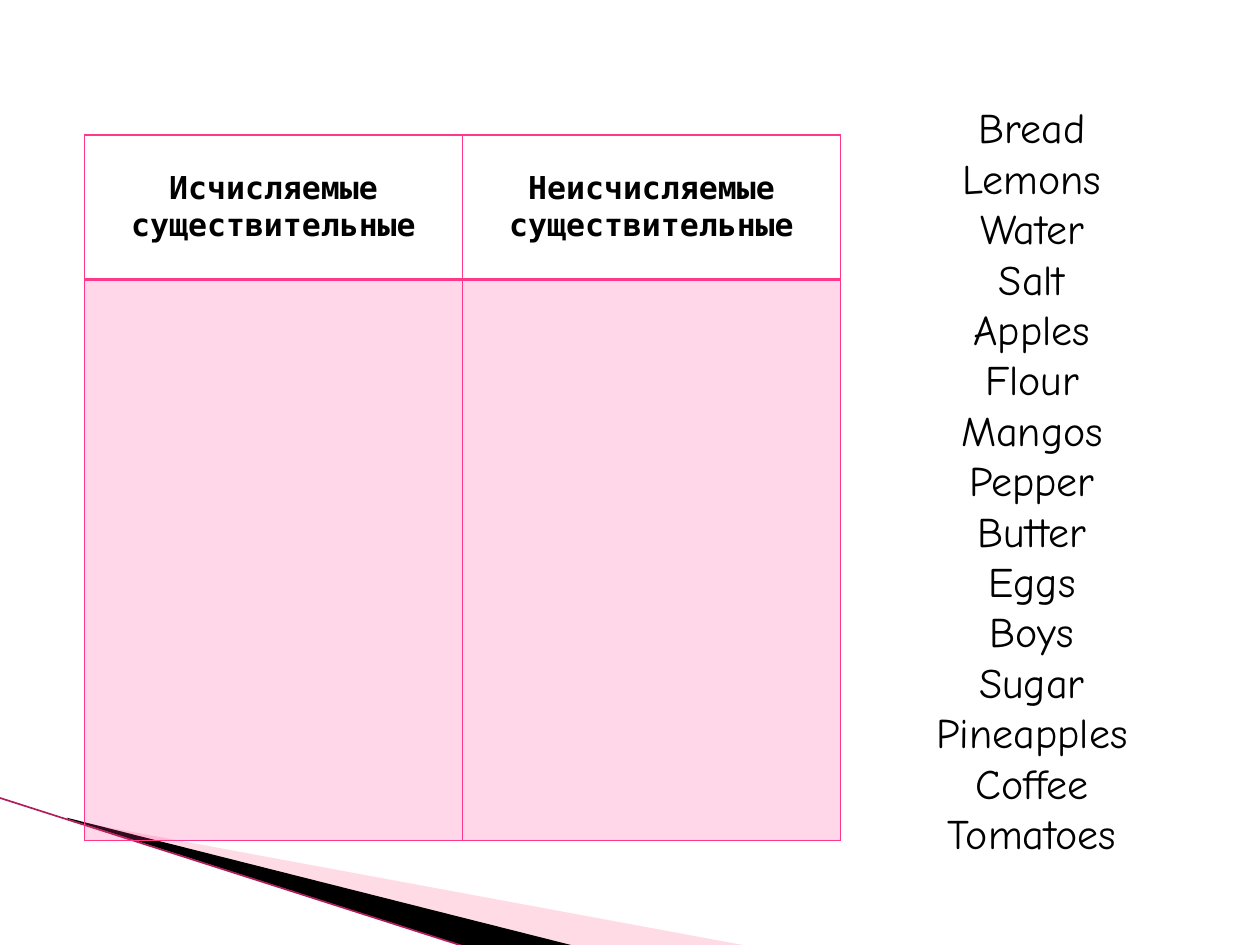
from lxml.etree import SubElement
from pptx import Presentation
from pptx.dml.color import RGBColor
from pptx.enum.shapes import MSO_CONNECTOR
from pptx.enum.text import MSO_ANCHOR, MSO_AUTO_SIZE, PP_ALIGN
from pptx.oxml.ns import qn
from pptx.util import Inches, Pt

BLACK = RGBColor(0x00, 0x00, 0x00)
PINK = RGBColor(0xFF, 0x38, 0x8C)
PALE_PINK = RGBColor(0xFF, 0xA5, 0xBF)
CRIMSON = RGBColor(0xB0, 0x1F, 0x5C)

HEADINGS = ["Исчисляемые существительные", "Неисчисляемые существительные"]
WORDS = ["Bread", "Lemons", "Water", "Salt", "Apples", "Flour", "Mangos", "Pepper",
         "Butter", "Eggs", "Boys", "Sugar", "Pineapples", "Coffee", "Tomatoes"]


def fill_with(owner, color, opacity=100):
    """Fill a shape or cell with a solid colour; opacity is in percent."""
    owner.fill.solid()
    owner.fill.fore_color.rgb = color
    if opacity < 100:
        element = owner._tc if hasattr(owner, "_tc") else owner._element
        color_element = next(element.iter(qn("a:srgbClr")))
        # Cell borders also hold colours, so take the one in the fill itself.
        if hasattr(owner, "_tc"):
            color_element = element.tcPr.find(qn("a:solidFill")).find(qn("a:srgbClr"))
        SubElement(color_element, qn("a:alpha"), val=str(opacity * 1000))


def add_text(para, text, font_name, size, bold=False):
    para.alignment = PP_ALIGN.CENTER
    span = para.add_run()
    span.text = text
    span.font.name = font_name
    span.font.size = Pt(size)
    span.font.bold = bold
    span.font.color.rgb = BLACK


deck = Presentation()
deck.slide_width, deck.slide_height = Inches(10), Inches(7.5)
page = deck.slides.add_slide(deck.slide_layouts[6])

# Wedges in the lower left corner
wedges = [
    ([(0.55, 6.51), (5.95, 7.51), (4.56, 7.51), (0.55, 6.5)], PALE_PINK, 40),
    ([(0.53, 6.49), (4.57, 7.51), (3.72, 7.52), (0.54, 6.5)], BLACK, 100),
]
for points, color, opacity in wedges:
    corners = [(Inches(x), Inches(y)) for x, y in points]
    builder = page.shapes.build_freeform(*corners[0])
    builder.add_line_segments(corners[1:], close=True)
    wedge = builder.convert_to_shape()
    wedge.shadow.inherit = False
    wedge.line.fill.background()
    fill_with(wedge, color, opacity)

edge = page.shapes.add_connector(
    MSO_CONNECTOR.STRAIGHT, Inches(-0.01), Inches(6.33), Inches(3.71), Inches(7.52))
edge.line.color.rgb = CRIMSON
edge.line.width = Pt(0.95)
SubElement(edge._element.spPr, qn("a:effectLst"))

# Table for sorting the nouns
table = page.shapes.add_table(
    2, 2, Inches(0.67), Inches(1.07), Inches(6), Inches(5.6)).table
table.first_row = table.horz_banding = False
table.rows[0].height = Inches(1.15)
table.rows[1].height = Inches(4.45)
for row in range(2):
    for column, heading in enumerate(HEADINGS):
        cell = table.cell(row, column)
        cell.vertical_anchor = MSO_ANCHOR.MIDDLE
        for side in ("lnL", "lnR", "lnT", "lnB"):
            is_divider = side == ("lnB", "lnT")[row]
            border = SubElement(cell._tc.get_or_add_tcPr(), qn(f"a:{side}"),
                                w=str(Pt(2 if is_divider else 1)))
            border_fill = SubElement(border, qn("a:solidFill"))
            SubElement(border_fill, qn("a:srgbClr"), val=str(PINK))
        if row == 0:
            cell.fill.background()
            add_text(cell.text_frame.paragraphs[0], heading, "DejaVu Sans Mono", 18, bold=True)
        else:
            fill_with(cell, PINK, 20)

# Word list
box = page.shapes.add_textbox(Inches(7.05), Inches(0.76), Inches(2.28), Inches(6.16))
frame = box.text_frame
frame.word_wrap = True
frame.auto_size = MSO_AUTO_SIZE.SHAPE_TO_FIT_TEXT
for index, word in enumerate(WORDS):
    para = frame.add_paragraph() if index else frame.paragraphs[0]
    add_text(para, word, "Comic Neue", 24)

deck.save("out.pptx")
